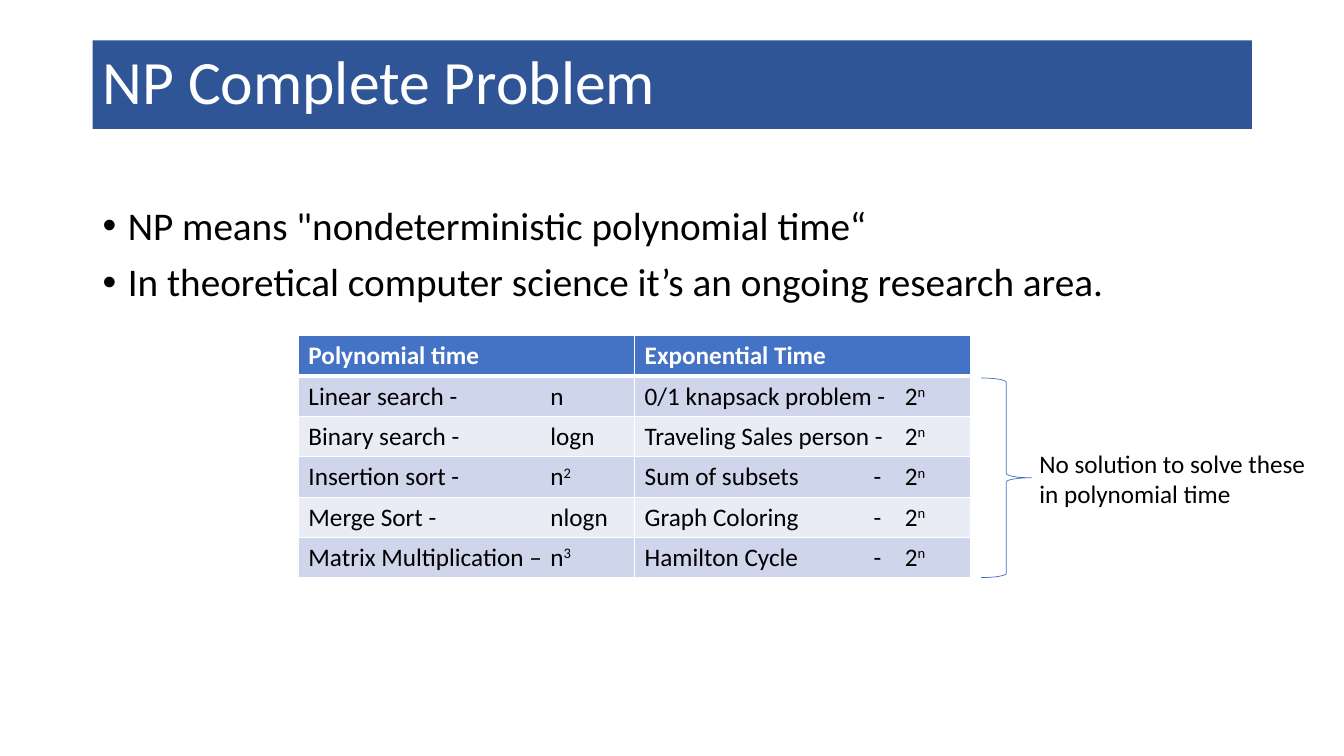
from dataclasses import dataclass

from lxml import etree
from pptx import Presentation
from pptx import util as u
from pptx.dml.color import RGBColor
from pptx.enum import shapes, text
from pptx.oxml import ns

COLORS = {
    "banner": "2F5597",
    "accent": "4472C4",
    "band_dark": "CFD5EA",
    "band_light": "E9EBF5",
    "white": "FFFFFF",
    "black": "000000",
}
FONT = "Calibri"
SLIDE_WIDTH = u.Inches(13.33)
SLIDE_HEIGHT = u.Inches(7.5)
POLYNOMIAL_STOPS = (2.4,)
EXPONENTIAL_STOPS = (2.27, 2.58)


@dataclass(frozen=True)
class Area:
    left: float
    top: float
    width: float
    height: float

    def lengths(self) -> tuple[int, ...]:
        return (
            int(SLIDE_WIDTH * self.left / 100),
            int(SLIDE_HEIGHT * self.top / 100),
            int(SLIDE_WIDTH * self.width / 100),
            int(SLIDE_HEIGHT * self.height / 100),
        )


@dataclass(frozen=True)
class Comparison:
    polynomial: tuple[str, ...]
    exponential: tuple[str, ...]


TITLE_AREA = Area(6.9, 5.33, 86.25, 11.73)
BODY_AREA = Area(6.9, 26.67, 86.25, 63.47)
TABLE_AREA = Area(22.2, 44.4, 50.04, 32)
BRACE_AREA = Area(73, 50, 3.75, 26.4)
NOTE_AREA = Area(76.6, 58.67, 21.98, 9.47)

COMPARISONS = (
    Comparison(("Polynomial time",), ("Exponential Time",)),
    Comparison(("Linear search -", "n"), ("0/1 knapsack problem -", "2^n")),
    Comparison(("Binary search -", "logn"), ("Traveling Sales person -", "2^n")),
    Comparison(("Insertion sort -", "n^2"), ("Sum of subsets", "-", "2^n")),
    Comparison(("Merge Sort -", "nlogn"), ("Graph Coloring", "-", "2^n")),
    Comparison(("Matrix Multiplication –", "n^3"), ("Hamilton Cycle", "-", "2^n")),
)


def rgb(name: str) -> RGBColor:
    return RGBColor.from_string(COLORS[name])


def add_element(parent, tag: str, **attributes: str):
    element = etree.SubElement(parent, ns.qn(tag))
    for key, value in attributes.items():
        element.set(key, value)
    return element


def write(frame, lines, *, size=18, color="black", bold=False, bullet=False,
          line_spacing=None, gap=0, stops=()) -> None:
    for index, line in enumerate(lines):
        paragraph = frame.add_paragraph() if index else frame.paragraphs[0]
        paragraph.alignment = text.PP_ALIGN.LEFT
        if line_spacing:
            paragraph.line_spacing = line_spacing
        if index and gap:
            paragraph.space_before = u.Pt(gap)
        properties = paragraph._p.get_or_add_pPr()
        if bullet:
            indent = u.Inches(0.25)
            properties.set("marL", str(indent))
            properties.set("indent", str(-indent))
            add_element(properties, "a:buFont", typeface="Arial")
            add_element(properties, "a:buChar", char="•")
        if stops:
            tabs = add_element(properties, "a:tabLst")
            for stop in stops:
                add_element(tabs, "a:tab", pos=str(u.Inches(stop)), algn="l")
        for raised, part in enumerate(line.split("^")):
            run = paragraph.add_run()
            run.text = part
            run.font.name = FONT
            run.font.size = u.Pt(size)
            run.font.bold = bold
            run.font.color.rgb = rgb(color)
            if raised:
                run._r.get_or_add_rPr().set("baseline", "30000")


def add_title(slide) -> None:
    banner = slide.shapes.add_shape(shapes.MSO_SHAPE.RECTANGLE, *TITLE_AREA.lengths())
    banner.shadow.inherit = False
    banner.fill.solid()
    banner.fill.fore_color.rgb = rgb("banner")
    banner.line.fill.background()
    banner.text_frame.vertical_anchor = text.MSO_ANCHOR.MIDDLE
    write(banner.text_frame, ["NP Complete Problem"], size=44, color="white",
          line_spacing=0.9)


def add_body(slide) -> None:
    body = slide.shapes.add_textbox(*BODY_AREA.lengths())
    body.text_frame.word_wrap = True
    write(body.text_frame, [
        'NP means "nondeterministic polynomial time“',
        "In theoretical computer science it’s an ongoing research area.",
    ], size=28, bullet=True, line_spacing=0.9, gap=10)


def style_cell(cell, fill: str, bottom_width: float) -> None:
    properties = cell._tc.get_or_add_tcPr()
    for side in ("L", "R", "T", "B"):
        width = bottom_width if side == "B" else 1
        border = add_element(properties, f"a:ln{side}", w=str(u.Pt(width)))
        paint = add_element(border, "a:solidFill")
        add_element(paint, "a:srgbClr", val=COLORS["white"])
    cell.fill.solid()
    cell.fill.fore_color.rgb = rgb(fill)


def add_comparison_table(slide) -> None:
    table = slide.shapes.add_table(len(COMPARISONS), 2, *TABLE_AREA.lengths()).table
    table.horz_banding = False
    for row, comparison in enumerate(COMPARISONS):
        header = row == 0
        fill = "accent" if header else "band_dark" if row % 2 else "band_light"
        columns = (
            (comparison.polynomial, POLYNOMIAL_STOPS),
            (comparison.exponential, EXPONENTIAL_STOPS),
        )
        for column, (parts, stops) in enumerate(columns):
            cell = table.cell(row, column)
            style_cell(cell, fill, 3 if header else 1)
            write(cell.text_frame, ["\t".join(parts)], bold=header,
                  color="white" if header else "black",
                  stops=() if header else stops)


def add_brace_note(slide) -> None:
    brace = slide.shapes.add_shape(shapes.MSO_SHAPE.RIGHT_BRACE, *BRACE_AREA.lengths())
    brace.shadow.inherit = False
    brace.fill.background()
    brace.line.color.rgb = rgb("accent")
    brace.line.width = u.Pt(0.5)
    note = slide.shapes.add_textbox(*NOTE_AREA.lengths())
    note.text_frame.word_wrap = False
    write(note.text_frame, ["No solution to solve these", "in polynomial time"])


def main() -> None:
    presentation = Presentation()
    presentation.slide_width = SLIDE_WIDTH
    presentation.slide_height = SLIDE_HEIGHT
    slide = presentation.slides.add_slide(presentation.slide_layouts[6])
    add_title(slide)
    add_body(slide)
    add_comparison_table(slide)
    add_brace_note(slide)
    presentation.save("out.pptx")


if __name__ == "__main__":
    main()
